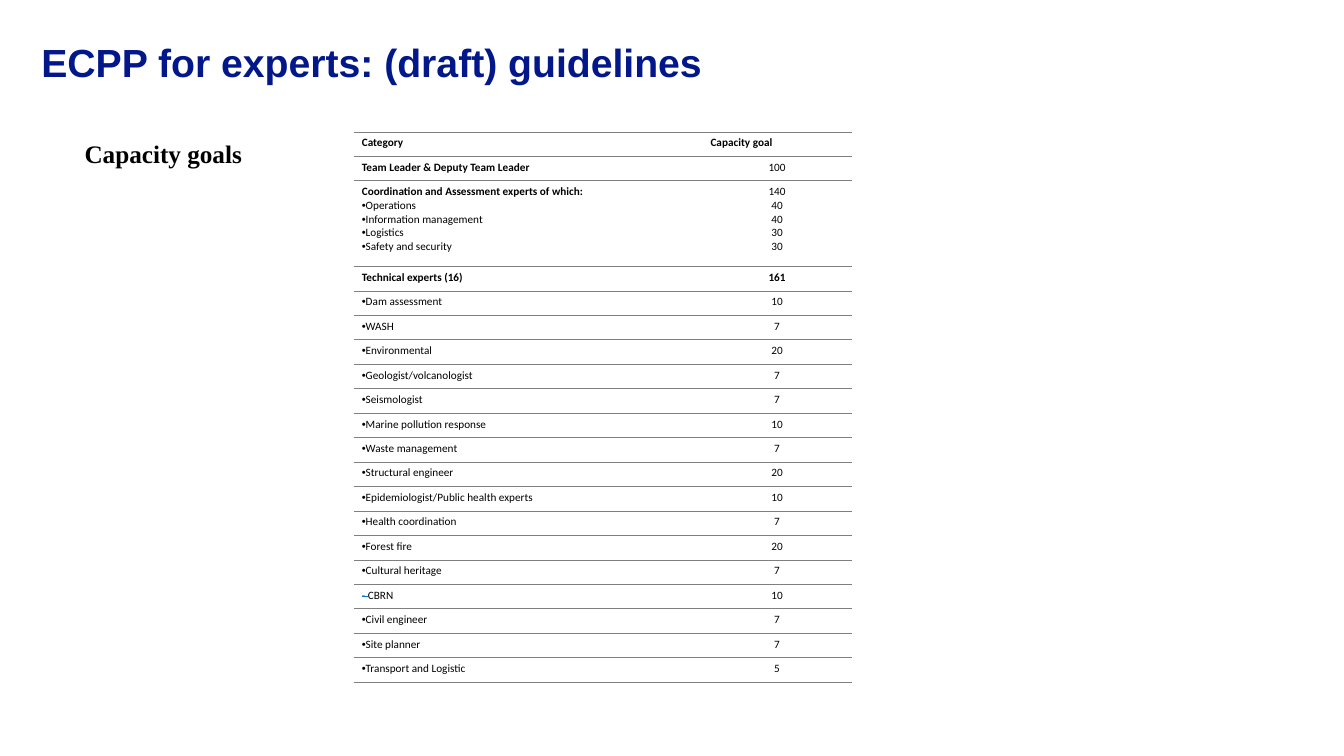
import pptx
import pptx.dml.color
import pptx.enum.text
import pptx.oxml
import pptx.oxml.ns
import pptx.util
from lxml import etree

Pt = pptx.util.Pt
ALIGN = pptx.enum.text.PP_ALIGN
ANCHOR = pptx.enum.text.MSO_ANCHOR

BULLET = "•"
COORDINATION = ["Operations", "Information management", "Logistics", "Safety and security"]
TECHNICAL = [
    ("Dam assessment", 10), ("WASH", 7), ("Environmental", 20),
    ("Geologist/volcanologist", 7), ("Seismologist", 7),
    ("Marine pollution response", 10), ("Waste management", 7),
    ("Structural engineer", 20), ("Epidemiologist/Public health experts", 10),
    ("Health coordination", 7), ("Forest fire", 20), ("Cultural heritage", 7),
    ("CBRN", 10), ("Civil engineer", 7), ("Site planner", 7),
    ("Transport and Logistic", 5),
]


def color(value):
    return pptx.dml.color.RGBColor.from_string(value)


def add_xml(parent, tag, **attributes):
    return etree.SubElement(parent, pptx.oxml.ns.qn(tag), **attributes)


def format_run(span, name, size, bold, shade="000000"):
    span.font.name = name
    span.font.size = Pt(size)
    span.font.bold = bold
    span.font.color.rgb = color(shade)


def place(shape, left, top, width, height):
    shape.left, shape.top = Pt(left), Pt(top)
    shape.width, shape.height = Pt(width), Pt(height)


def set_title(page, text):
    title = page.shapes.title
    place(title, 22.3, 28.8, 849.6, 34.6)
    title.text_frame.text = text
    title.text_frame.vertical_anchor = ANCHOR.MIDDLE
    para = title.text_frame.paragraphs[0]
    para.alignment = ALIGN.LEFT
    para.line_spacing = 0.9
    format_run(para.runs[0], "Arial", 28, True, "02188A")


def add_heading(page, text):
    box = page.shapes.add_textbox(Pt(53.3), Pt(95), Pt(162), Pt(74.9))
    box.text_frame.word_wrap = True
    box.text_frame.text = text
    para = box.text_frame.paragraphs[0]
    para.space_after = Pt(6)
    format_run(para.runs[0], "Times New Roman", 18, True)


def add_borders(cell):
    properties = cell._tc.get_or_add_tcPr()
    for side in ("L", "R"):
        add_xml(add_xml(properties, f"a:ln{side}", w="0"), "a:noFill")
    for side in ("T", "B"):
        line = add_xml(properties, f"a:ln{side}", w=str(Pt(0.75)))
        add_xml(add_xml(line, "a:solidFill"), "a:srgbClr", val="7F7F7F")


def add_bullet(para):
    properties = para._p.get_or_add_pPr()
    properties.set("marL", "0")
    properties.set("indent", "0")
    add_xml(properties, "a:buFont", typeface="Arial")
    add_xml(properties, "a:buChar", char=BULLET)


def fill_cell(cell, lines, alignment, bold):
    """Write lines; those that start with the bullet sign become list items."""
    cell.margin_left = cell.margin_right = Pt(5.76)
    cell.margin_top = cell.margin_bottom = Pt(2.88)
    add_borders(cell)
    cell.fill.background()
    cell.text_frame.text = "\n".join(line.lstrip(BULLET) for line in lines)
    for para, line in zip(cell.text_frame.paragraphs, lines):
        listed = line.startswith(BULLET)
        para.alignment = alignment
        if listed:
            add_bullet(para)
        format_run(para.runs[0], "Calibri", 8, bold and not listed)


def strike_dash(cell):
    """Put a struck blue dash before the category."""
    para = cell.text_frame.paragraphs[0]
    category = para.text
    para.text = "- "
    dash, name = para.runs[0], para.add_run()
    name.text = category
    format_run(dash, "Calibri", 8, False, "0078D4")
    dash._r.get_or_add_rPr().set("strike", "sngStrike")
    format_run(name, "Calibri", 8, False)


def capacity_rows():
    """Give category lines, goal lines and whether the goal is bold."""
    rows = [
        (["Category"], ["Capacity goal"], True),
        (["Team Leader & Deputy Team Leader"], ["100"], False),
        (["Coordination and Assessment experts of which:"]
         + [BULLET + name for name in COORDINATION],
         ["140", "40", "40", "30", "30"], False),
        (["Technical experts (16)"], ["161"], True),
    ]
    return rows + [([BULLET + name], [str(goal)], False) for name, goal in TECHNICAL]


def add_capacity_table(page):
    rows = capacity_rows()
    frame = page.shapes.add_table(len(rows), 2, Pt(252.7), Pt(94.3), Pt(355.7), Pt(393.1))
    table = frame.table
    table.first_row = table.horz_banding = False
    table.columns[0].width, table.columns[1].width = Pt(249.1), Pt(106.6)
    for index, (categories, goals, bold_goal) in enumerate(rows):
        table.rows[index].height = Pt(61.2 if len(goals) > 1 else 17.47)
        category_cell, goal_cell = table.cell(index, 0), table.cell(index, 1)
        if categories == [BULLET + "CBRN"]:
            fill_cell(category_cell, ["CBRN"], ALIGN.JUSTIFY, False)
            strike_dash(category_cell)
        else:
            fill_cell(category_cell, categories, ALIGN.JUSTIFY, True)
        fill_cell(goal_cell, goals, ALIGN.CENTER if index else ALIGN.JUSTIFY, bold_goal)


def main():
    deck = pptx.Presentation()
    deck.slide_width, deck.slide_height = Pt(960), Pt(540)
    page = deck.slides.add_slide(deck.slide_layouts[5])  # title only

    # Title and side heading
    set_title(page, "ECPP for experts: (draft) guidelines")
    add_heading(page, "Capacity goals")

    # Goals by category
    add_capacity_table(page)
    deck.save("out.pptx")


if __name__ == "__main__":
    main()
